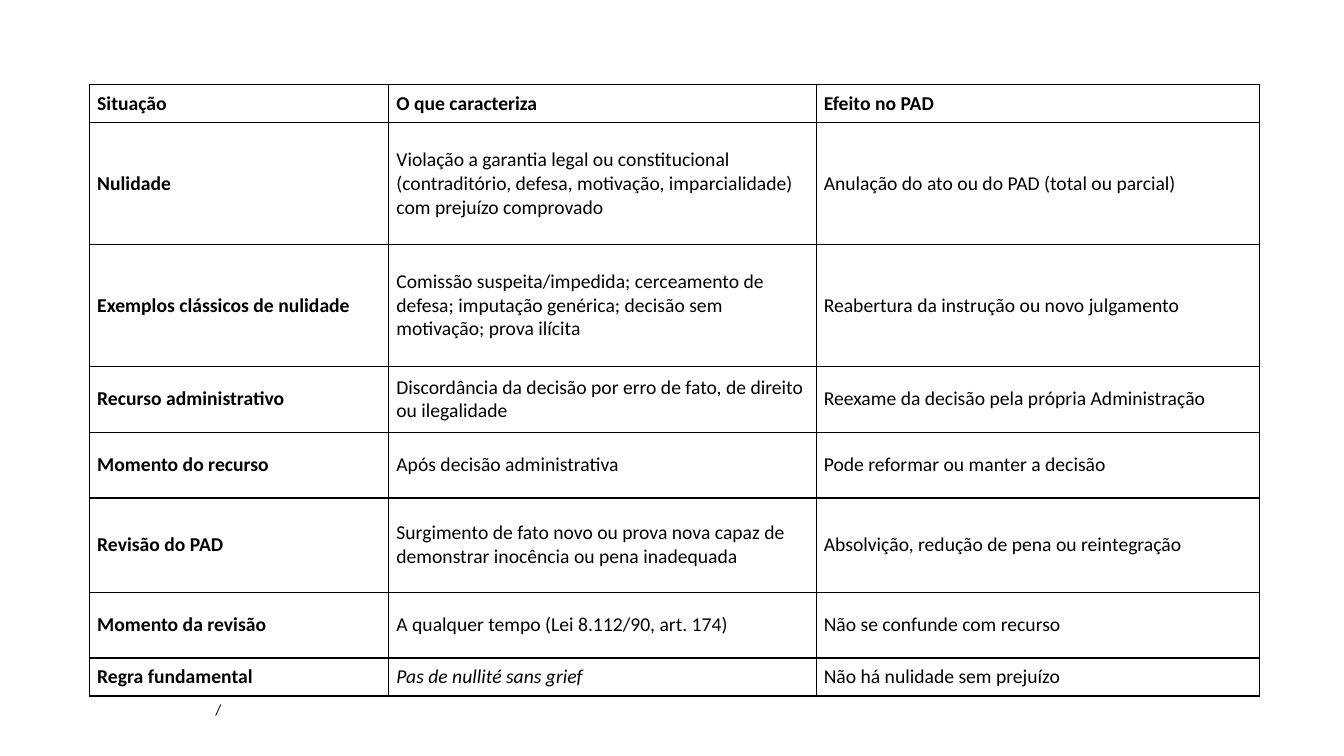
from lxml import etree
from pptx import Presentation
from pptx.dml.color import RGBColor
from pptx.enum.text import MSO_ANCHOR, MSO_AUTO_SIZE
from pptx.oxml.ns import qn
from pptx.util import Cm, Pt

MIDDLE = MSO_ANCHOR.MIDDLE
GROW = MSO_AUTO_SIZE.SHAPE_TO_FIT_TEXT
BLACK = RGBColor(0x00, 0x00, 0x00)
FONT = "Calibri"

HEADINGS = ("Situação", "O que caracteriza", "Efeito no PAD")
SITUATIONS = [
    ("Nulidade",
     "Violação a garantia legal ou constitucional (contraditório, defesa, "
     "motivação, imparcialidade) com prejuízo comprovado",
     "Anulação do ato ou do PAD (total ou parcial)"),
    ("Exemplos clássicos de nulidade",
     "Comissão suspeita/impedida; cerceamento de defesa; imputação genérica; "
     "decisão sem motivação; prova ilícita",
     "Reabertura da instrução ou novo julgamento"),
    ("Recurso administrativo",
     "Discordância da decisão por erro de fato, de direito ou ilegalidade",
     "Reexame da decisão pela própria Administração"),
    ("Momento do recurso",
     "Após decisão administrativa",
     "Pode reformar ou manter a decisão"),
    ("Revisão do PAD",
     "Surgimento de fato novo ou prova nova capaz de demonstrar inocência "
     "ou pena inadequada",
     "Absolvição, redução de pena ou reintegração"),
    ("Momento da revisão",
     "A qualquer tempo (Lei 8.112/90, art. 174)",
     "Não se confunde com recurso"),
    ("Regra fundamental",
     "Pas de nullité sans grief",
     "Não há nulidade sem prejuízo"),
]
LATIN_MAXIM = "Pas de nullité sans grief"
FOOTNOTE = "/"

COLUMN_WIDTHS = (7.54, 10.77, 11.18)
ROW_HEIGHTS = (0.96, 3.07, 3.07, 1.66, 1.66, 2.37, 1.66, 0.96)
TABLE_LEFT, TABLE_TOP = 2.26, 2.13
CELL_MARGIN_X, CELL_MARGIN_Y = 0.19, 0.1


def style_text(paragraph, size, bold=False, italic=False):
    for run in paragraph.runs:
        font = run.font
        font.name, font.size = FONT, Pt(size)
        font.bold, font.italic = bold, italic
        font.color.rgb = BLACK


def add_borders(cell):
    properties = cell._tc.get_or_add_tcPr()
    for position, side in enumerate(("lnL", "lnR", "lnT", "lnB")):
        border = etree.Element(qn(f"a:{side}"), w=str(Pt(1)))
        fill = etree.SubElement(border, qn("a:solidFill"))
        etree.SubElement(fill, qn("a:srgbClr"), val=str(BLACK))
        properties.insert(position, border)


def add_situation_table(slide):
    rows = [HEADINGS, *SITUATIONS]
    table = slide.shapes.add_table(
        len(rows), len(HEADINGS), Cm(TABLE_LEFT), Cm(TABLE_TOP),
        Cm(sum(COLUMN_WIDTHS)), Cm(sum(ROW_HEIGHTS))).table
    table.horz_banding = False
    for column, width in zip(table.columns, COLUMN_WIDTHS):
        column.width = Cm(width)
    for row, height in zip(table.rows, ROW_HEIGHTS):
        row.height = Cm(height)

    for r, texts in enumerate(rows):
        for c, text in enumerate(texts):
            cell = table.cell(r, c)
            cell.text = text
            cell.vertical_anchor = MIDDLE
            cell.margin_left = cell.margin_right = Cm(CELL_MARGIN_X)
            cell.margin_top = cell.margin_bottom = Cm(CELL_MARGIN_Y)
            cell.fill.background()
            add_borders(cell)
            style_text(cell.text_frame.paragraphs[0], 14,
                       bold=r == 0 or c == 0, italic=text == LATIN_MAXIM)


def add_footnote(slide):
    footnote = slide.shapes.add_textbox(
        Cm(5.18), Cm(17.53), Cm(23.5), Cm(0.73)).text_frame
    footnote.word_wrap = True
    footnote.auto_size = GROW
    footnote.text = FOOTNOTE
    style_text(footnote.paragraphs[0], 11)


def main():
    deck = Presentation()
    deck.slide_width, deck.slide_height = Cm(33.87), Cm(19.05)
    blank_layout = deck.slide_layouts[6]
    slide = deck.slides.add_slide(blank_layout)
    add_footnote(slide)
    add_situation_table(slide)
    deck.save("out.pptx")


if __name__ == "__main__":
    main()
